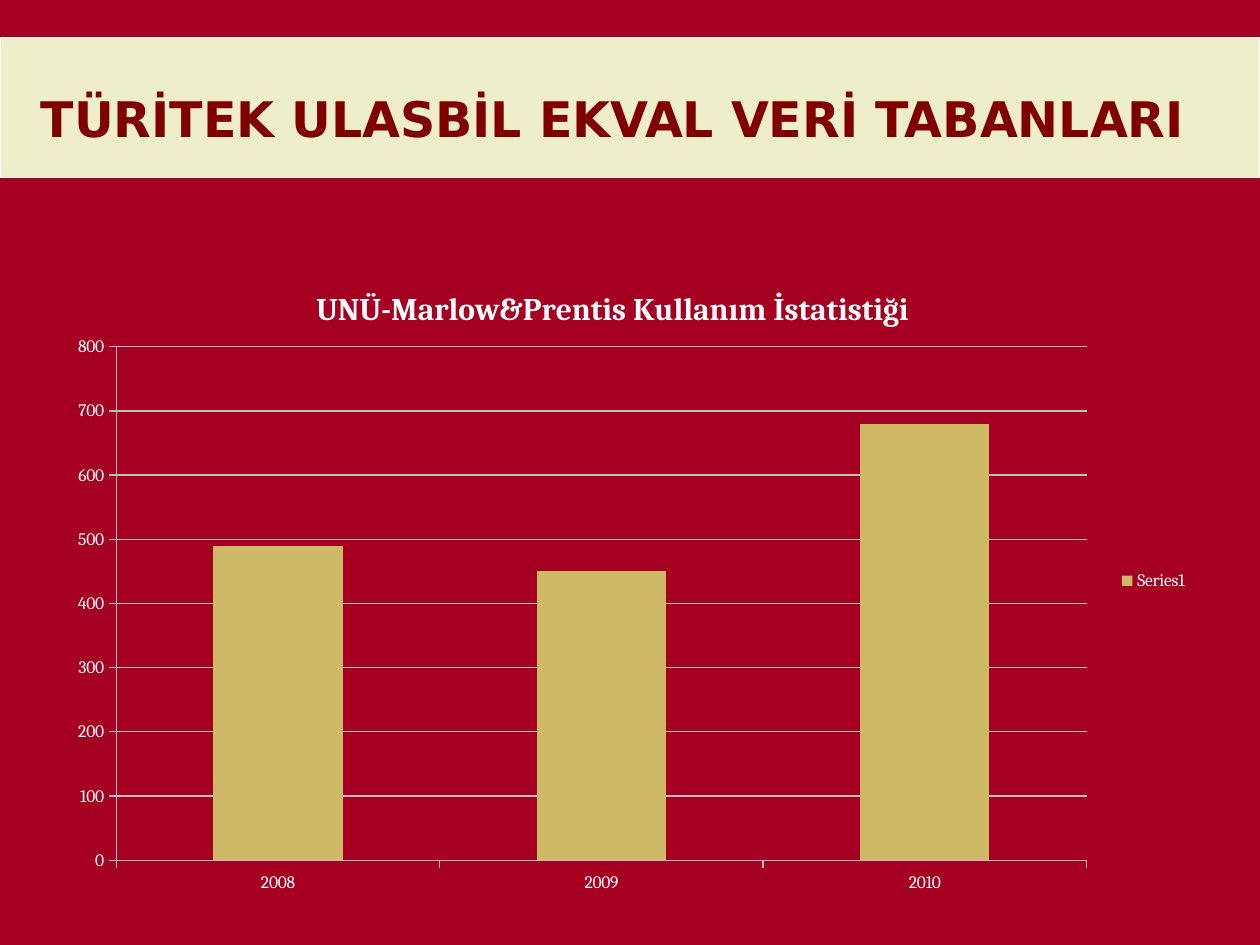
from lxml import etree
from pptx import Presentation
from pptx import util as u
from pptx.chart.data import CategoryChartData
from pptx.dml.color import RGBColor
from pptx.enum import chart as ch, shapes, text
from pptx.oxml.ns import qn

COLORS = {
    "background": "A50021",
    "band": "EEEECA",
    "heading": "800000",
    "light": "FFFFFF",
    "bars": "CEB966",
    "grid": "BFBFBF",
}
USAGE = {"2008": 490, "2009": 450, "2010": 680}


def rgb(name):
    return RGBColor.from_string(COLORS[name])


def style_font(font, face, size, color, bold=False):
    font.name = face
    font.size = u.Pt(size)
    font.color.rgb = rgb(color)
    font.bold = bold


def style_line(line, color):
    line.color.rgb = rgb(color)
    line.width = u.Pt(0.75)


def place(parent, index, **fractions):
    """Fix the position of a chart part, in fractions of the chart area."""
    for old in parent.findall(qn("c:layout")):
        parent.remove(old)
    layout = etree.Element(qn("c:layout"))
    manual = etree.SubElement(layout, qn("c:manualLayout"))
    if "w" in fractions:
        etree.SubElement(manual, qn("c:layoutTarget")).set("val", "inner")
    for mode in ("xMode", "yMode"):
        etree.SubElement(manual, qn(f"c:{mode}")).set("val", "edge")
    for key, value in fractions.items():
        etree.SubElement(manual, qn(f"c:{key}")).set("val", str(value))
    parent.insert(index, layout)


def add_heading(slide, wording):
    band = slide.shapes.add_shape(
        shapes.MSO_SHAPE.RECTANGLE,
        u.Inches(0), u.Inches(0.3), u.Inches(10), u.Inches(1.11))
    band.shadow.inherit = False
    band.fill.solid()
    band.fill.fore_color.rgb = rgb("band")
    style_line(band.line, "light")

    frame = band.text_frame
    frame.word_wrap = True
    frame.vertical_anchor = text.MSO_ANCHOR.MIDDLE
    frame.margin_left, frame.margin_right = u.Inches(0.1), u.Inches(0.38)
    frame.margin_top, frame.margin_bottom = u.Inches(0.21), u.Inches(0.05)
    heading = frame.paragraphs[0]
    heading.text = wording
    heading.alignment = text.PP_ALIGN.CENTER
    style_font(heading.font, "DejaVu Sans", 28, "heading", bold=True)


def style_axis(axis):
    axis.major_tick_mark = ch.XL_TICK_MARK.OUTSIDE
    axis.minor_tick_mark = ch.XL_TICK_MARK.NONE
    style_line(axis.format.line, "grid")


def add_usage_chart(slide, wording):
    data = CategoryChartData()
    data.categories = list(USAGE)
    data.add_series("Series1", list(USAGE.values()))
    chart = slide.shapes.add_chart(
        ch.XL_CHART_TYPE.COLUMN_CLUSTERED,
        u.Inches(0.47), u.Inches(2.03), u.Inches(9.06), u.Inches(5.16),
        data).chart
    style_font(chart.font, "Cambria", 10, "light")

    # Title and plot area
    chart.has_title = True
    title = chart.chart_title
    caption = title.text_frame.paragraphs[0]
    caption.text = wording
    style_font(caption.font, "Cambria", 18, "light", bold=True)
    title.include_in_layout = False
    place(title._element, 1, x=0.22, y=0.04)
    place(chart._chartSpace.chart.plotArea, 0, x=0.05, y=0.14, w=0.85, h=0.79)

    # Columns
    plot = chart.plots[0]
    plot.gap_width = 150
    plot.vary_by_categories = False
    columns = plot.series[0].format.fill
    columns.solid()
    columns.fore_color.rgb = rgb("bars")

    # Axes and legend
    style_axis(chart.category_axis)
    scale = chart.value_axis
    style_axis(scale)
    scale.minimum_scale, scale.maximum_scale, scale.major_unit = 0, 800, 100
    scale.has_major_gridlines = True
    style_line(scale.major_gridlines.format.line, "grid")
    chart.has_legend = True
    chart.legend.position = ch.XL_LEGEND_POSITION.RIGHT
    chart.legend.include_in_layout = False


def main():
    deck = Presentation()
    deck.slide_width, deck.slide_height = u.Inches(10), u.Inches(7.5)
    slide = deck.slides.add_slide(deck.slide_layouts[6])
    slide.background.fill.solid()
    slide.background.fill.fore_color.rgb = rgb("background")

    add_usage_chart(slide, "UNÜ-Marlow&Prentis Kullanım İstatistiği")
    add_heading(slide, "TÜRİTEK ULASBİL EKVAL VERİ TABANLARI")
    deck.save("out.pptx")


if __name__ == "__main__":
    main()
